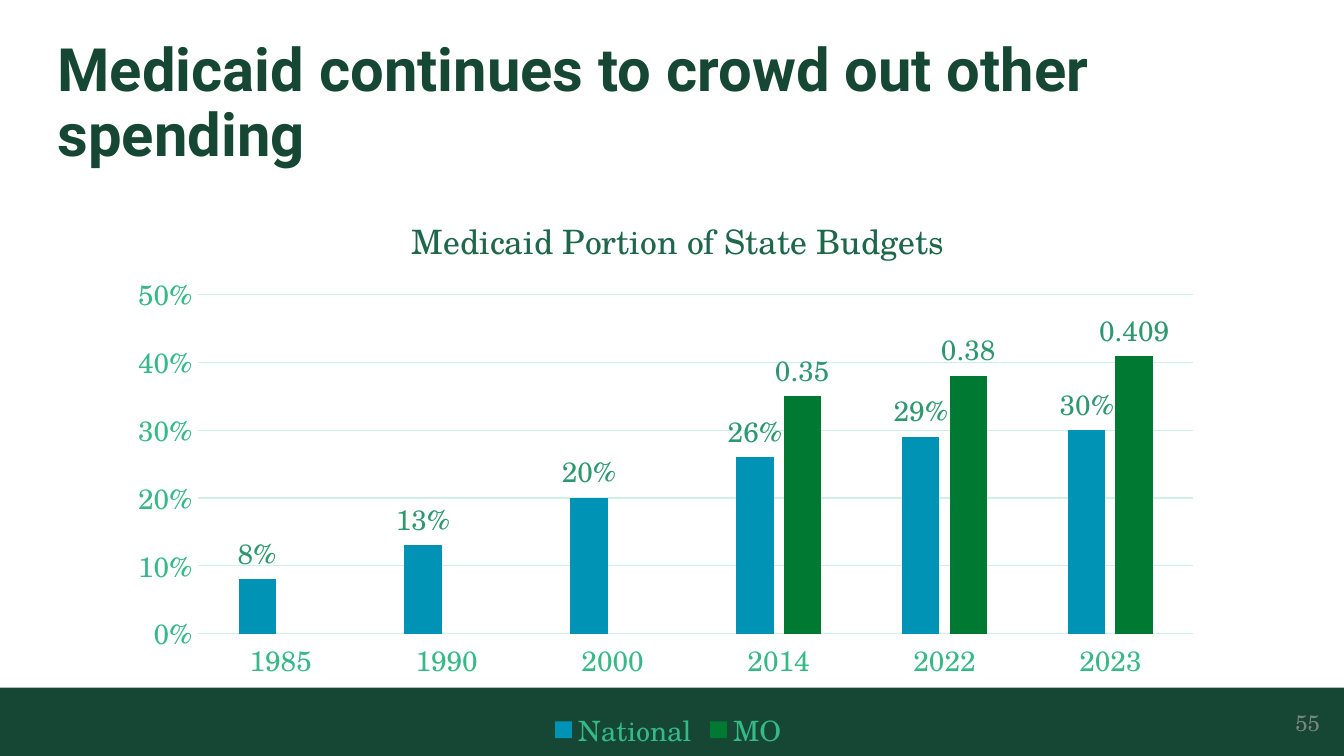
import pptx
import pptx.chart.data
import pptx.dml.color
import pptx.enum.chart
import pptx.enum.shapes
import pptx.enum.text
import pptx.oxml
import pptx.util

Cm = pptx.util.Cm
Pt = pptx.util.Pt
COLORS = {
    "dark green": "154734", "page number": "7A857F", "axis text": "36B887",
    "grid": "CFF1E4", "chart title": "1F674C", "labels": "2D986F",
    "National": "0093B6", "MO": "007A33",
}
SERIF = "TeX Gyre Schola"


def rgb(name):
    return pptx.dml.color.RGBColor.from_string(COLORS[name])


def write(frame, text, color, size, font=SERIF, bold=False, align=None, spacing=None):
    paragraph = frame.paragraphs[0]
    paragraph.alignment = align
    paragraph.line_spacing = spacing
    run = paragraph.add_run()
    run.text = text
    run.font.name, run.font.size, run.font.bold = font, Pt(size), bold
    run.font.color.rgb = rgb(color)


presentation = pptx.Presentation()
presentation.slide_width, presentation.slide_height = Cm(25.4), Cm(14.29)
slide = presentation.slides.add_slide(presentation.slide_layouts[6])

# Footer band
footer = slide.shapes.add_shape(
    pptx.enum.shapes.MSO_SHAPE.RECTANGLE, Cm(-0.1), Cm(13), Cm(25.5), Cm(1.29))
footer.shadow.inherit = False
footer.fill.solid()
footer.fill.fore_color.rgb = rgb("dark green")
footer.line.fill.background()

# Headline
headline = slide.shapes.add_textbox(Cm(1.09), Cm(0.76), Cm(23.22), Cm(1.12)).text_frame
headline.word_wrap = True
headline.margin_left = headline.margin_right = headline.margin_top = headline.margin_bottom = 0
write(headline, "Medicaid continues to crowd out other spending", "dark green", 32,
      font="Roboto", bold=True, spacing=0.9)

# Page number
page_number = slide.shapes.add_textbox(Cm(23.7), Cm(13.28), Cm(1.5), Cm(0.76)).text_frame
page_number.word_wrap = True
page_number.vertical_anchor = pptx.enum.text.MSO_ANCHOR.MIDDLE
write(page_number, "55", "page number", 12, align=pptx.enum.text.PP_ALIGN.RIGHT)

# Budget shares
shares = pptx.chart.data.CategoryChartData(number_format="0%")
shares.categories = ["1985", "1990", "2000", "2014", "2022", "2023"]
shares.add_series("National", [0.08, 0.13, 0.2, 0.26, 0.29, 0.30])
shares.add_series("MO", [None, None, None, 0.35, 0.38, 0.409], number_format="General")
chart = slide.shapes.add_chart(
    pptx.enum.chart.XL_CHART_TYPE.COLUMN_CLUSTERED,
    Cm(2.29), Cm(3.25), Cm(20.68), Cm(11.05), shares).chart
chart.font.name, chart.font.size = SERIF, Pt(15)
chart.font.color.rgb = rgb("dark green")
write(chart.chart_title.text_frame, "Medicaid Portion of State Budgets", "chart title", 18)
chart.chart_title.include_in_layout = False

# Legend
chart.has_legend = True
chart.legend.position = pptx.enum.chart.XL_LEGEND_POSITION.BOTTOM
chart.legend.include_in_layout = False

# Axes and grid
years, percents = chart.category_axis, chart.value_axis
percents.minimum_scale, percents.maximum_scale, percents.major_unit = 0, 0.5, 0.1
percents.tick_labels.number_format = "0%"
percents.tick_labels.number_format_is_linked = False
percents.format.line.fill.background()
for axis in (years, percents):
    axis.major_tick_mark = pptx.enum.chart.XL_TICK_MARK.NONE
for line in (years.format.line, percents.major_gridlines.format.line):
    line.color.rgb = rgb("grid")
    line.width = Pt(0.75)

# Columns and their labels
columns = chart.plots[0]
columns.gap_width, columns.overlap = 219, -27
columns.vary_by_categories = False
label_fonts = []
for series, label_format in zip(columns.series, ("0%", "General")):
    series.format.fill.solid()
    series.format.fill.fore_color.rgb = rgb(series.name)
    labels = series.data_labels
    labels.show_value = True
    labels.number_format, labels.number_format_is_linked = label_format, False
    labels.position = pptx.enum.chart.XL_LABEL_POSITION.OUTSIDE_END
    label_fonts.append((labels.font, "labels"))

# Chart fonts
for font, color in label_fonts + [(part.font, "axis text") for part in (
        chart.legend, years.tick_labels, percents.tick_labels)]:
    font.name, font.size = SERIF, Pt(15)
    font.color.rgb = rgb(color)

# Fixed places of the chart title and the plot area, as shares of the chart
title_element = chart.chart_title._element
plot_element = chart._chartSpace.chart.plotArea
for element, places in (
        (title_element, {"x": 0.26, "y": 0.06}),
        (plot_element, {"x": 0.07, "y": 0.21, "w": 0.91, "h": 0.58})):
    for old in element.findall(pptx.oxml.ns.qn("c:layout")):
        element.remove(old)
    target = '<c:layoutTarget val="inner"/>' if "w" in places else ""
    modes = "".join(f'<c:{key}Mode val="edge"/>' for key in ("x", "y"))
    values = "".join(f'<c:{key} val="{value}"/>' for key, value in places.items())
    layout = pptx.oxml.parse_xml(
        f'<c:layout {pptx.oxml.ns.nsdecls("c")}><c:manualLayout>'
        f'{target}{modes}{values}</c:manualLayout></c:layout>')
    element.insert(1 if element is title_element else 0, layout)

presentation.save("out.pptx")
